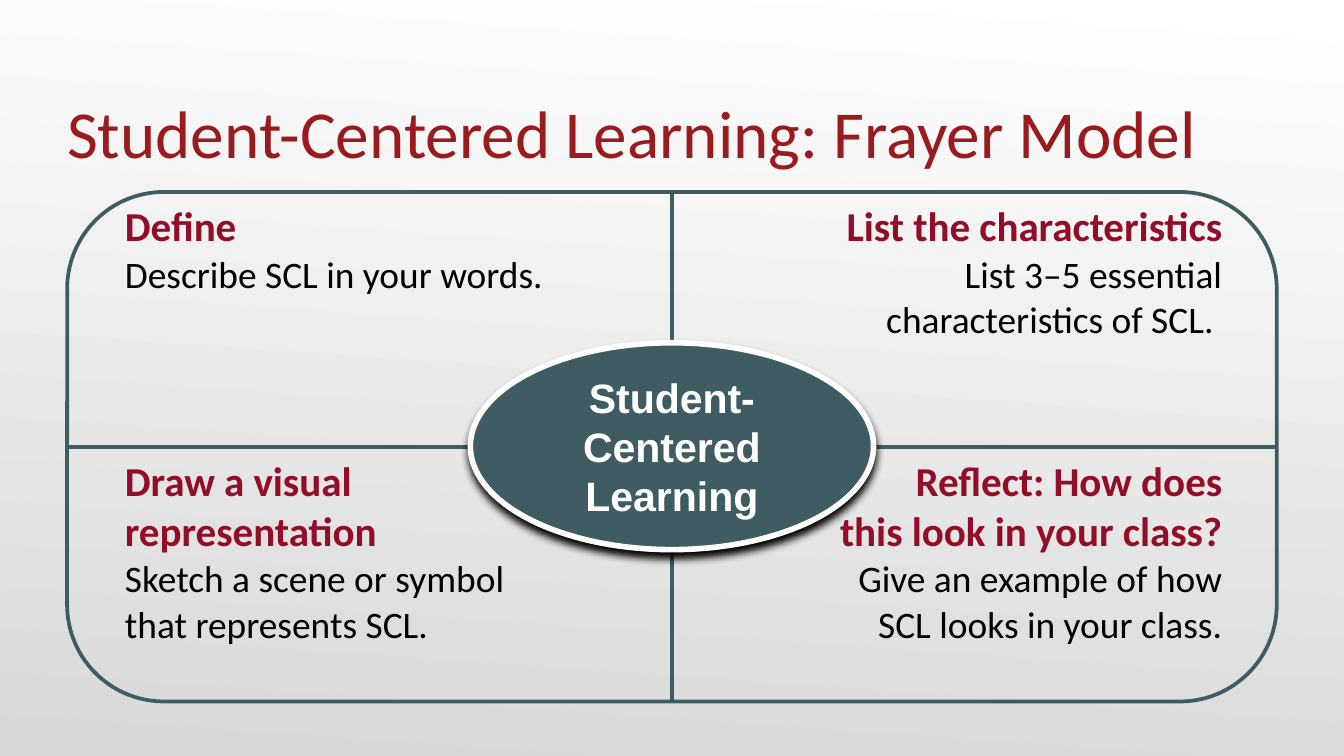
from dataclasses import dataclass

from lxml import etree
from pptx import Presentation
from pptx import util as u
from pptx.dml.color import RGBColor
from pptx.enum import shapes, text
from pptx.oxml import ns


@dataclass(frozen=True)
class Theme:
    teal: RGBColor = RGBColor(0x3E, 0x5C, 0x61)
    title_red: RGBColor = RGBColor(0x99, 0x1B, 0x1E)
    heading_red: RGBColor = RGBColor(0x91, 0x0D, 0x28)
    white: RGBColor = RGBColor(0xFF, 0xFF, 0xFF)
    grey: RGBColor = RGBColor(0xD8, 0xD8, 0xD8)
    black: RGBColor = RGBColor(0, 0, 0)
    body_font: str = "Calibri"
    hub_font: str = "Arial"
    title_size: int = 36
    heading_size: int = 22
    body_size: int = 20


THEME = Theme()
NO_TABLE_STYLE = "{2D5ABB26-0587-4C30-8999-92F81FD0307C}"
FRAME = [u.Cm(v) for v in (1.27, 3.63, 22.86, 9.63)]
LEFT, RIGHT = text.PP_ALIGN.LEFT, text.PP_ALIGN.RIGHT
QUADRANTS = [
    [("Define", "Describe SCL in your words."),
     ("List the characteristics",
      "List 3–5 essential\ncharacteristics of SCL. ")],
    [("Draw a visual\nrepresentation",
      "Sketch a scene or symbol\nthat represents SCL."),
     ("Reflect: How does\nthis look in your class?",
      "Give an example of how\nSCL looks in your class.")],
]


def write(paragraph, words, size, color, bold=False, font=THEME.body_font,
          align=LEFT):
    paragraph.text = words
    paragraph.alignment = align
    for run in paragraph.runs:
        run.font.name = font
        run.font.size = u.Pt(size)
        run.font.bold = bold
        run.font.color.rgb = color


def set_margins(target, left, top, right, bottom):
    target.margin_left, target.margin_top = u.Cm(left), u.Cm(top)
    target.margin_right, target.margin_bottom = u.Cm(right), u.Cm(bottom)


def paint_background(slide):
    fill = slide.background.fill
    fill.gradient()
    fill.gradient_angle = 266
    for stop, color in zip(fill.gradient_stops, (THEME.white, THEME.grey)):
        stop.color.rgb = color


def add_title(slide, words):
    title = slide.shapes.add_textbox(u.Cm(1.27), u.Cm(0.86), u.Cm(22.86),
                                     u.Cm(2.39))
    frame = title.text_frame
    frame.word_wrap = True
    frame.vertical_anchor = text.MSO_ANCHOR.BOTTOM
    set_margins(frame, 0, 0.13, 0, 0)
    write(frame.paragraphs[0], words, THEME.title_size, THEME.title_red)


def add_frame(slide):
    frame = slide.shapes.add_shape(
        shapes.MSO_SHAPE.ROUNDED_RECTANGLE, *FRAME)
    frame.adjustments[0] = 0.19
    frame.shadow.inherit = False
    frame.fill.background()
    frame.line.color.rgb = THEME.teal
    frame.line.width = u.Pt(2)
    return frame


def add_divider(slide, frame, start_side, end_side):
    divider = slide.shapes.add_connector(
        shapes.MSO_CONNECTOR.STRAIGHT, 0, 0, 0, 0)
    divider.begin_connect(frame, start_side)
    divider.end_connect(frame, end_side)
    divider.line.color.rgb = THEME.teal
    divider.line.width = u.Pt(2.25)
    etree.SubElement(divider._element.spPr, ns.qn("a:effectLst"))


def add_quadrants(slide):
    grid = slide.shapes.add_table(2, 2, u.Cm(2.16), FRAME[1], u.Cm(21.14),
                                  FRAME[3]).table
    grid.first_row = grid.horz_banding = False
    grid._tbl.tblPr.find(ns.qn("a:tableStyleId")).text = NO_TABLE_STYLE
    for row, prompts in enumerate(QUADRANTS):
        for column, (heading, prompt) in enumerate(prompts):
            cell = grid.cell(row, column)
            cell.fill.background()
            set_margins(cell, 0.2, 0.2, 0.2, 0.2)
            align = (LEFT, RIGHT)[column]
            write(cell.text_frame.paragraphs[0], heading, THEME.heading_size,
                  THEME.heading_red, bold=True, align=align)
            write(cell.text_frame.add_paragraph(), prompt, THEME.body_size,
                  THEME.black, align=align)


def add_shadow(shape, color, blur, distance, angle):
    shape.shadow.inherit = False
    effects = shape._element.spPr.find(ns.qn("a:effectLst"))
    shadow = etree.SubElement(
        effects, ns.qn("a:outerShdw"), blurRad=str(u.Pt(blur)),
        dist=str(u.Pt(distance)), dir=str(angle * 60000), rotWithShape="0")
    etree.SubElement(shadow, ns.qn("a:srgbClr"), val=str(color))


def add_hub(slide, words):
    hub = slide.shapes.add_shape(shapes.MSO_SHAPE.OVAL, u.Cm(8.89),
                                 u.Cm(6.48), u.Cm(7.62), u.Cm(3.91))
    hub.fill.solid()
    hub.fill.fore_color.rgb = THEME.teal
    hub.line.color.rgb = THEME.white
    hub.line.width = u.Pt(3)
    add_shadow(hub, THEME.black, blur=4.5, distance=3, angle=90)
    frame = hub.text_frame
    frame.word_wrap = True
    frame.vertical_anchor = text.MSO_ANCHOR.MIDDLE
    set_margins(frame, 0, 0, 0, 0)
    write(frame.paragraphs[0], words, THEME.heading_size, THEME.white,
          bold=True, font=THEME.hub_font, align=text.PP_ALIGN.CENTER)


def main():
    deck = Presentation()
    deck.slide_width, deck.slide_height = u.Cm(25.4), u.Cm(14.29)
    slide = deck.slides.add_slide(deck.slide_layouts[6])
    paint_background(slide)
    frame = add_frame(slide)
    add_divider(slide, frame, 0, 2)
    add_divider(slide, frame, 1, 3)
    add_title(slide, "Student-Centered Learning: Frayer Model")
    add_quadrants(slide)
    add_hub(slide, "Student-Centered Learning")
    deck.save("out.pptx")


if __name__ == "__main__":
    main()
